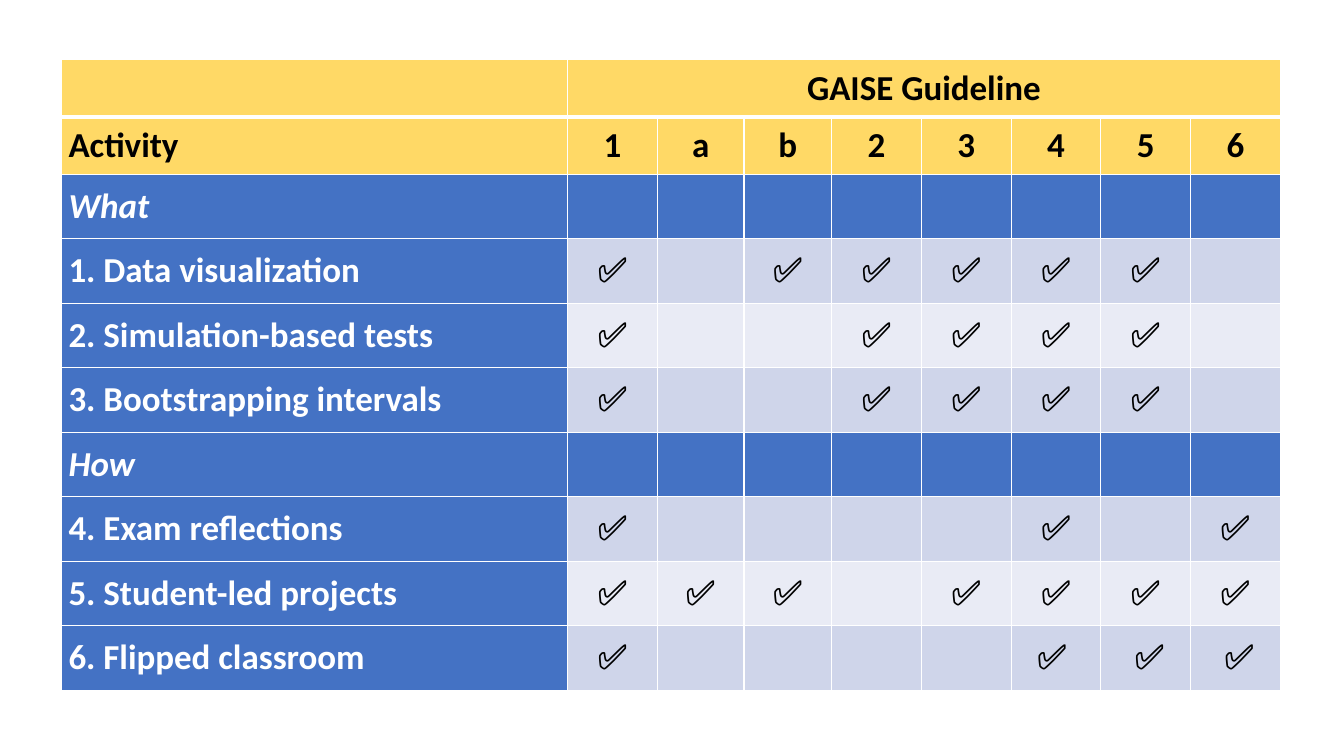
import pptx
import pptx.dml.color
import pptx.enum.text
import pptx.oxml.ns
import pptx.util
from lxml import etree

PX = 9144  # one hundredth of an inch
GOLD, BLUE, WHITE, BLACK = "FFD966", "4472C4", "FFFFFF", "000000"
BANDS = ["CFD5EA", "E9EBF5"]
GUIDES = "1ab23456"
WIDTHS = [502, 89, 86, 87] + [89] * 5
HEIGHTS = [57] * 2 + [64] * 8

# Each section holds activities and the guidelines they meet
PARTS = {
    "What": [
        ("1. Data visualization", "1b2345"),
        ("2. Simulation-based tests", "12345"),
        ("3. Bootstrapping intervals", "12345"),
    ],
    "How": [
        ("4. Exam reflections", "146"),
        ("5. Student-led projects", "1ab3456"),
        ("6. Flipped classroom", "1456"),
    ],
}
# Ticks nudged by a no-break space
NUDGED = {("6. Flipped classroom", "4"): "✅ ",
          ("6. Flipped classroom", "5"): " ✅",
          ("6. Flipped classroom", "6"): " ✅"}


def px(num):
    return pptx.util.Emu(num * PX)


def color(hexa):
    return pptx.dml.color.RGBColor.from_string(hexa)


def edge(cell, side, width):
    props = cell._tc.get_or_add_tcPr()
    line = etree.SubElement(props, pptx.oxml.ns.qn("a:ln" + side),
                            w=str(pptx.util.Pt(width)))
    fill = etree.SubElement(line, pptx.oxml.ns.qn("a:solidFill"))
    etree.SubElement(fill, pptx.oxml.ns.qn("a:srgbClr"), val=WHITE)


def style(cell, fill, top=1, base=1):
    for side, width in zip("LRTB", (1, 1, top, base)):
        edge(cell, side, width)
    cell.fill.solid()
    cell.fill.fore_color.rgb = color(fill)
    cell.margin_left = cell.margin_right = px(7)
    cell.margin_top = cell.margin_bottom = 0
    cell.vertical_anchor = pptx.enum.text.MSO_ANCHOR.MIDDLE


def write(cell, text, ink, bold=True, slant=False, mid=True):
    align = pptx.enum.text.PP_ALIGN
    para = cell.text_frame.paragraphs[0]
    para.alignment = align.CENTER if mid else align.LEFT
    font = para.font
    font.name, font.size = "Calibri", pptx.util.Pt(25)
    font.bold, font.italic = bold, slant
    font.color.rgb = color(ink)
    if text:
        para.add_run().text = text


def add_grid(slide):
    shape = slide.shapes.add_table(len(HEIGHTS), len(WIDTHS), px(61), px(59),
                                   px(sum(WIDTHS)), px(sum(HEIGHTS)))
    grid = shape.table
    grid.first_row = grid.horz_banding = False
    for col, width in zip(grid.columns, WIDTHS):
        col.width = px(width)
    for row, height in zip(grid.rows, HEIGHTS):
        row.height = px(height)
    return grid


def add_head(grid):
    for col, name in enumerate(["Activity", *GUIDES]):
        style(grid.cell(0, col), GOLD, base=3)
        style(grid.cell(1, col), GOLD, top=3)
        write(grid.cell(1, col), name, BLACK, mid=col > 0)
    write(grid.cell(0, 0), "", BLACK)
    title = grid.cell(0, 1)
    title.merge(grid.cell(0, len(GUIDES)))
    write(title, "GAISE Guideline", BLACK)


def add_row(grid, row, label, marks, fill, slant=False):
    first = grid.cell(row, 0)
    style(first, BLUE)
    write(first, label, WHITE, slant=slant, mid=False)
    for col, guide in enumerate(GUIDES, 1):
        cell = grid.cell(row, col)
        style(cell, fill)
        tick = NUDGED.get((label, guide), "✅") if guide in marks else ""
        write(cell, tick, BLACK, bold=False)


def main():
    deck = pptx.Presentation()
    deck.slide_width, deck.slide_height = px(1333), px(750)
    slide = deck.slides.add_slide(deck.slide_layouts[6])
    grid = add_grid(slide)
    add_head(grid)

    # Section rows, then their banded activities
    row = 2
    for part, acts in PARTS.items():
        add_row(grid, row, part, "", BLUE, slant=True)
        for step, (label, marks) in enumerate(acts):
            add_row(grid, row + 1 + step, label, marks, BANDS[step % 2])
        row += 1 + len(acts)
    deck.save("out.pptx")


if __name__ == "__main__":
    main()
